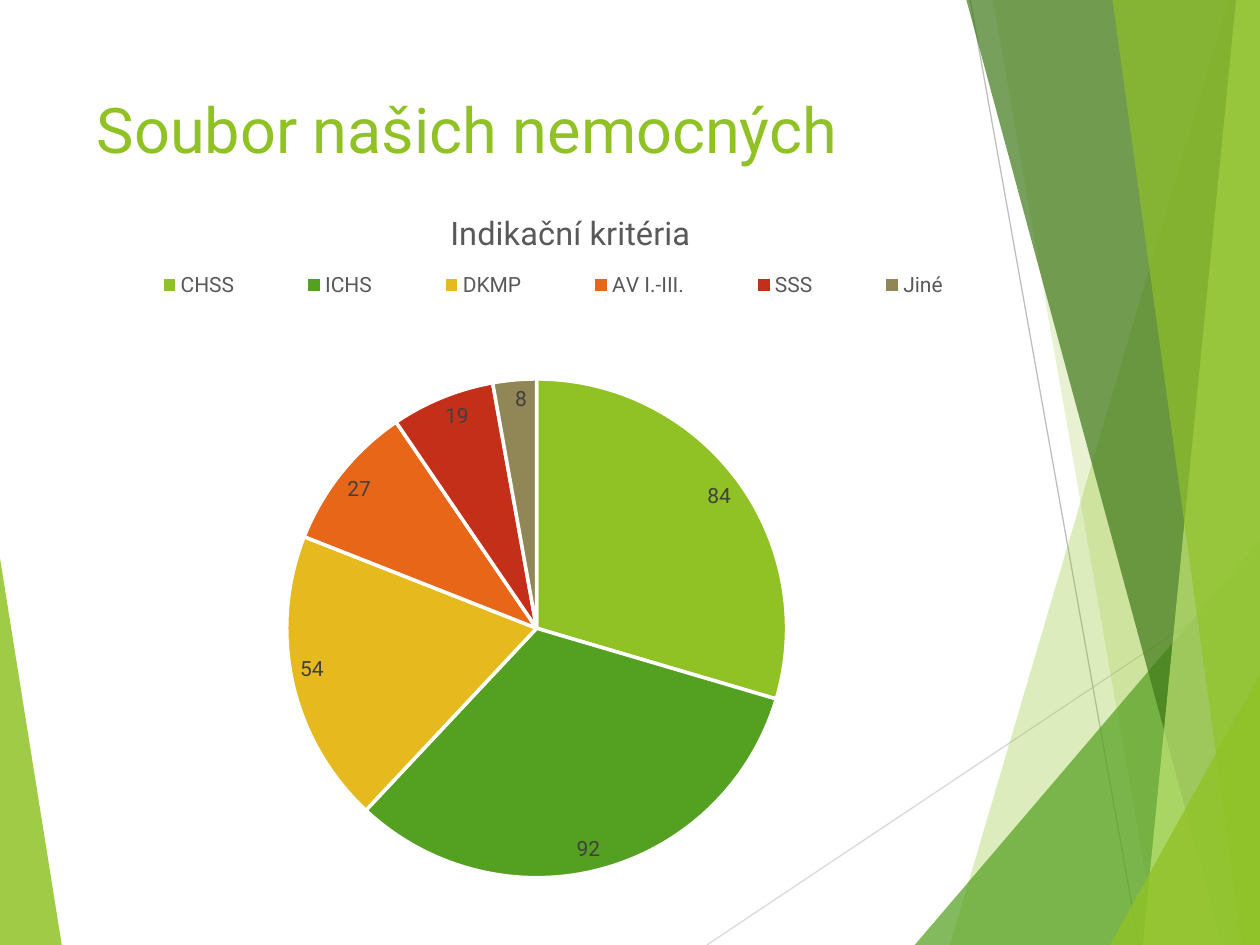
from lxml.etree import SubElement, Element
from pptx import Presentation
from pptx.chart.data import CategoryChartData
from pptx.dml.color import RGBColor
from pptx.enum.chart import XL_CHART_TYPE as ChartType
from pptx.enum.chart import XL_LABEL_POSITION as LabelPosition
from pptx.enum.chart import XL_LEGEND_POSITION as LegendPosition
from pptx.enum.shapes import MSO_CONNECTOR as Connector
from pptx.enum.text import MSO_ANCHOR as Anchor
from pptx.oxml.ns import qn
from pptx.util import Inches, Pt

COLORS = {
    "lime": "90C226", "green": "54A021", "forest": "3F7819", "pale": "C0E474",
    "yellow": "E6B91E", "orange": "E76618", "red": "C42F1A", "olive": "918655",
    "white": "FFFFFF", "light_gray": "D9D9D9", "gray": "BFBFBF",
    "heading": "595959", "label": "404040",
}
WIDTH, HEIGHT = 10, 7.5


class SlideBuilder:
    font_name = "Roboto"

    def __init__(self, slide):
        self.slide = slide

    def color(self, name):
        return RGBColor.from_string(COLORS[name])

    def style(self, font, size, color):
        font.name = self.font_name
        font.size = Pt(size)
        font.bold = False
        font.color.rgb = self.color(color)

    def facet(self, points, color, opacity):
        start, *others = [(Inches(x), Inches(y)) for x, y in points]
        builder = self.slide.shapes.build_freeform(*start)
        builder.add_line_segments(others, close=True)
        shape = builder.convert_to_shape()
        shape.shadow.inherit = False
        shape.line.fill.background()
        shape.fill.solid()
        shape.fill.fore_color.rgb = self.color(color)
        fill_color = shape.fill._xPr.find(qn("a:solidFill"))[0]
        SubElement(fill_color, qn("a:alpha"), val=str(opacity * 1000))

    def line(self, start, end, color):
        connector = self.slide.shapes.add_connector(
            Connector.STRAIGHT, *map(Inches, start + end))
        connector.line.width = Pt(0.75)
        connector.line.color.rgb = self.color(color)
        SubElement(connector._element.spPr, qn("a:effectLst"))

    def title(self, text, box):
        shape = self.slide.shapes.add_textbox(*map(Inches, box))
        frame = shape.text_frame
        frame.word_wrap = True
        frame.vertical_anchor = Anchor.TOP
        paragraph = frame.paragraphs[0]
        paragraph.text = text
        self.style(paragraph.font, 36, "lime")

    def place(self, parent, index, **values):
        layout = parent.find(qn("c:layout"))
        if layout is not None:
            parent.remove(layout)
        layout = Element(qn("c:layout"))
        parent.insert(index, layout)
        manual = SubElement(layout, qn("c:manualLayout"))
        for name, value in values.items():
            SubElement(manual, qn(f"c:{name}"), val=str(value))

    def pie(self, name, slices, box):
        data = CategoryChartData()
        data.categories = [category for category, _, _ in slices]
        data.add_series(name, [value for _, value, _ in slices])
        chart = self.slide.shapes.add_chart(
            ChartType.PIE, *map(Inches, box), data).chart
        self.style(chart.font, 12, "label")

        chart.has_title = True
        paragraph = chart.chart_title.text_frame.paragraphs[0]
        paragraph.text = name
        self.style(paragraph.font, 18.6, "heading")

        chart.has_legend = True
        legend = chart.legend
        legend.position = LegendPosition.TOP
        legend.include_in_layout = False
        self.style(legend.font, 12, "heading")

        plot = chart.plots[0]
        plot.vary_by_categories = True
        series = plot.series[0]
        for index, (_, _, color) in enumerate(slices):
            point_format = series.points[index].format
            point_format.fill.solid()
            point_format.fill.fore_color.rgb = self.color(color)
            point_format.line.width = Pt(2)
            point_format.line.color.rgb = self.color("white")
        labels = series.data_labels
        labels.show_value = True
        labels.position = LabelPosition.INSIDE_END
        self.style(labels.font, 12, "label")

        edges = dict(xMode="edge", yMode="edge")
        self.place(chart.chart_title._element, 1, **edges, x=0.35, y=0.07)
        self.place(legend._element, 1, **edges, x=0.03, y=0.14, w=0.84, h=0.08)
        self.place(chart._chartSpace.chart.plotArea, 0, layoutTarget="inner",
                   **edges, x=0.02, y=0.31, w=0.83, h=0.69)


def main():
    presentation = Presentation()
    presentation.slide_width = Inches(WIDTH)
    presentation.slide_height = Inches(HEIGHT)
    slide = presentation.slides.add_slide(presentation.slide_layouts[6])
    builder = SlideBuilder(slide)

    top_right, bottom_right = (WIDTH, 0), (WIDTH, HEIGHT)
    builder.facet([(0, 4.43), (0.49, HEIGHT), (0, HEIGHT)], "lime", 85)
    builder.line((5.61, HEIGHT), (WIDTH, 4.57), "light_gray")
    builder.line((7.7, 0), (9.04, HEIGHT), "gray")
    for top, bottom, color, opacity in [
        ((9.75, 0), 7.54, "lime", 30),
        ((7.88, 0), 9.19, "lime", 20),
        ((WIDTH, 4.29), 7.26, "green", 72),
        ((7.67, 0), 9.7, "forest", 70),
        ((9.81, 0), 9.07, "pale", 70),
        ((8.83, 0), 9.86, "lime", 65),
        ((WIDTH, 5.35), 8.81, "lime", 80),
    ]:
        corners = [bottom_right] if top[1] else [bottom_right, top_right]
        builder.facet([top, (bottom, HEIGHT)] + corners, color, opacity)

    builder.title("Soubor našich nemocných", (0.67, 0.67, 6.94, 1.44))
    builder.pie("Indikační kritéria", [
        ("CHSS", 84, "lime"),
        ("ICHS", 92, "green"),
        ("DKMP", 54, "yellow"),
        ("AV I.-III.", 27, "orange"),
        ("SSS", 19, "red"),
        ("Jiné", 8, "olive"),
    ], (0.51, 1.23, 8.62, 5.75))
    presentation.save("out.pptx")


if __name__ == "__main__":
    main()
